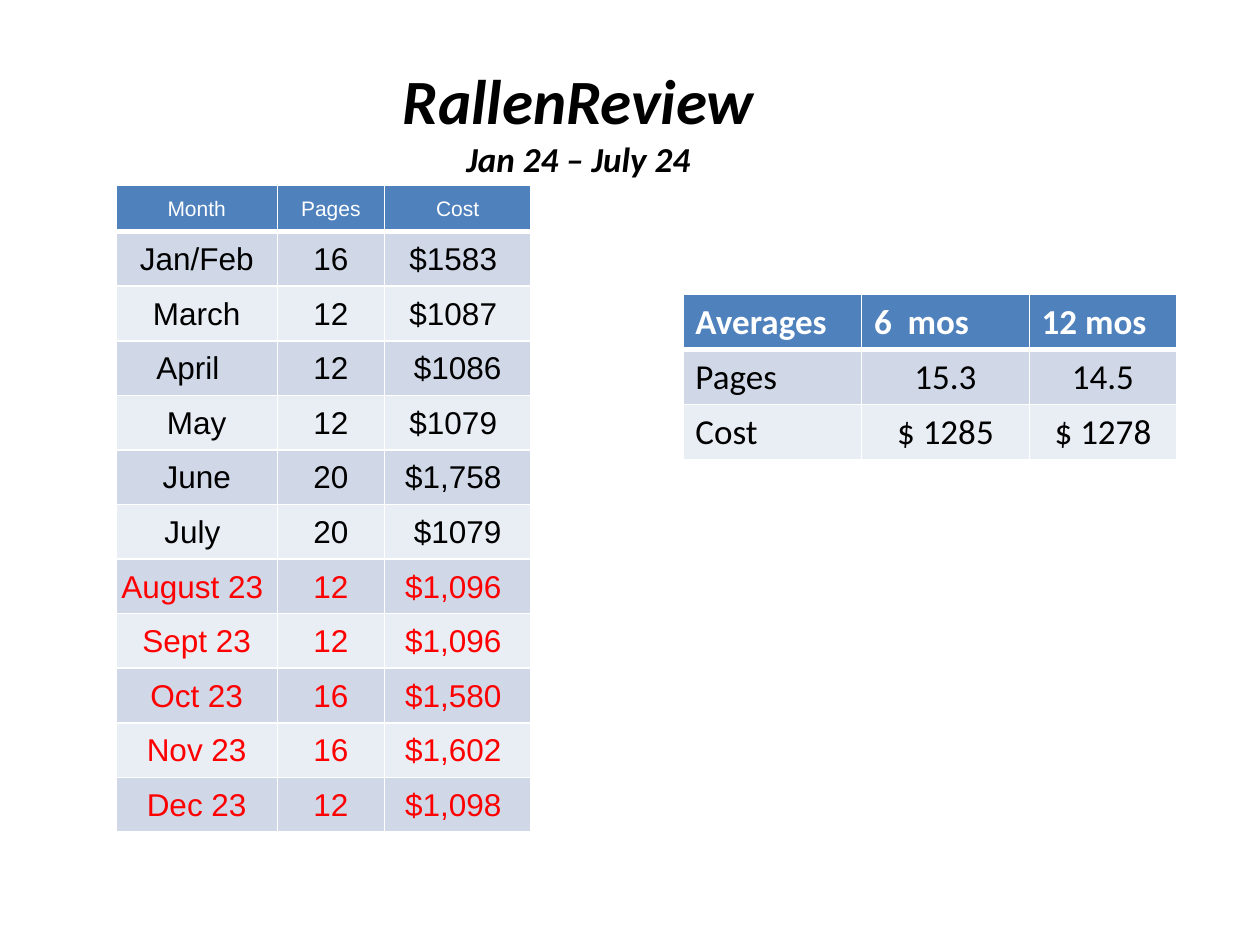
from dataclasses import dataclass

from lxml import etree
from pptx import Presentation
from pptx.dml.color import RGBColor
from pptx.enum.text import MSO_ANCHOR, MSO_AUTO_SIZE, PP_ALIGN
from pptx.oxml.ns import qn
from pptx.util import Cm, Pt

LEFT, CENTER = PP_ALIGN.LEFT, PP_ALIGN.CENTER
TOP, MIDDLE = MSO_ANCHOR.TOP, MSO_ANCHOR.MIDDLE
GROW = MSO_AUTO_SIZE.SHAPE_TO_FIT_TEXT


@dataclass(frozen=True)
class Theme:
    header: str = "4F81BD"
    bands: tuple = ("D0D8E8", "E9EDF4")
    white: str = "FFFFFF"
    black: str = "000000"
    red: str = "FF0000"
    heading_font: str = "Calibri"
    figures_font: str = "Arial"
    title_size: int = 36
    subtitle_size: int = 20
    months_header_size: int = 12
    months_size: int = 18
    averages_size: int = 20
    border: int = 1
    header_border: int = 3


THEME = Theme()


@dataclass(frozen=True)
class TableDesign:
    left: float
    top: float
    column_widths: tuple
    header_height: float
    row_height: float
    font: str
    header_size: int
    body_size: int
    header_bold: bool
    header_alignments: tuple
    body_alignments: tuple
    anchor: int
    margins: tuple
    rows: tuple
    first_red_row: int


MONTHS = TableDesign(
    left=2.34, top=3.73, column_widths=(3.25, 2.16, 2.95),
    header_height=0.94, row_height=1.1,
    font=THEME.figures_font, header_size=THEME.months_header_size,
    body_size=THEME.months_size, header_bold=False,
    header_alignments=(CENTER,) * 3, body_alignments=(CENTER,) * 3,
    anchor=MIDDLE, margins=(0.03, 0.03, 0.03, 0),
    rows=(
        ("Month", "Pages", "Cost"),
        ("Jan/Feb", "16", "$1583 "),
        ("March", "12", "$1087 "),
        ("April  ", "12", "$1086"),
        ("May", "12", "$1079 "),
        ("June", "20", "$1,758 "),
        ("July ", "20", "$1079"),
        ("August 23 ", "12", "$1,096 "),
        ("Sept 23", "12", "$1,096 "),
        ("Oct 23", "16", "$1,580 "),
        ("Nov 23", "16", "$1,602 "),
        ("Dec 23", "12", "$1,098 "),
    ),
    first_red_row=7,
)

AVERAGES = TableDesign(
    left=13.77, top=5.94, column_widths=(3.6, 3.38, 2.97),
    header_height=1.1, row_height=1.1,
    font=THEME.heading_font, header_size=THEME.averages_size,
    body_size=THEME.averages_size, header_bold=True,
    header_alignments=(LEFT,) * 3, body_alignments=(LEFT, CENTER, CENTER),
    anchor=TOP, margins=(0.25, 0.13, 0.25, 0.13),
    rows=(
        ("Averages", "6  mos", "12 mos"),
        ("Pages", "15.3", "14.5"),
        ("Cost", "$ 1285", "$ 1278"),
    ),
    first_red_row=3,
)


def format_paragraph(paragraph, alignment, font: str, size: int, color: str,
                     bold: bool, italic: bool = False) -> None:
    paragraph.alignment = alignment
    for run in paragraph.runs:
        run.font.name = font
        run.font.size = Pt(size)
        run.font.bold = bold
        run.font.italic = italic
        run.font.color.rgb = RGBColor.from_string(color)


def add_borders(cell, top_width: int, bottom_width: int) -> None:
    properties = cell._tc.get_or_add_tcPr()
    widths = {"a:lnL": THEME.border, "a:lnR": THEME.border,
              "a:lnT": top_width, "a:lnB": bottom_width}
    for tag, width in widths.items():
        line = etree.SubElement(properties, qn(tag), w=str(Pt(width)))
        fill = etree.SubElement(line, qn("a:solidFill"))
        etree.SubElement(fill, qn("a:srgbClr"), val=THEME.white)


def format_cell(cell, design: TableDesign, row: int, column: int) -> None:
    header = row == 0
    cell.text_frame.text = design.rows[row][column]
    cell.vertical_anchor = design.anchor
    (cell.margin_left, cell.margin_top,
     cell.margin_right, cell.margin_bottom) = map(Cm, design.margins)
    if header:
        color = THEME.white
    else:
        color = THEME.red if row >= design.first_red_row else THEME.black
    alignments = design.header_alignments if header else design.body_alignments
    format_paragraph(
        cell.text_frame.paragraphs[0], alignments[column], design.font,
        design.header_size if header else design.body_size, color,
        header and design.header_bold)
    add_borders(cell,
                THEME.header_border if row == 1 else THEME.border,
                THEME.header_border if header else THEME.border)
    cell.fill.solid()
    cell.fill.fore_color.rgb = RGBColor.from_string(
        THEME.header if header else THEME.bands[(row - 1) % 2])


def draw_table(slide, design: TableDesign) -> None:
    body_rows = len(design.rows) - 1
    height = design.header_height + body_rows * design.row_height
    table = slide.shapes.add_table(
        len(design.rows), len(design.column_widths),
        Cm(design.left), Cm(design.top),
        Cm(sum(design.column_widths)), Cm(height)).table
    for column, width in zip(table.columns, design.column_widths):
        column.width = Cm(width)
    for index, row in enumerate(table.rows):
        row.height = Cm(design.row_height if index else design.header_height)
        for column, cell in enumerate(row.cells):
            format_cell(cell, design, index, column)


def draw_title(slide) -> None:
    title = slide.shapes.add_textbox(Cm(4.32), Cm(1.12), Cm(14.68), Cm(2.64))
    text_frame = title.text_frame
    text_frame.word_wrap = True
    text_frame.auto_size = GROW
    text_frame.text = "RallenReview\nJan 24 – July 24"
    sizes = (THEME.title_size, THEME.subtitle_size)
    for paragraph, size in zip(text_frame.paragraphs, sizes):
        format_paragraph(paragraph, CENTER, THEME.heading_font, size,
                         THEME.black, True, True)


def main() -> None:
    presentation = Presentation()
    presentation.slide_width, presentation.slide_height = Cm(25.4), Cm(19.05)
    slide = presentation.slides.add_slide(presentation.slide_layouts[6])
    draw_title(slide)
    for design in (MONTHS, AVERAGES):
        draw_table(slide, design)
    presentation.save("out.pptx")


if __name__ == "__main__":
    main()
